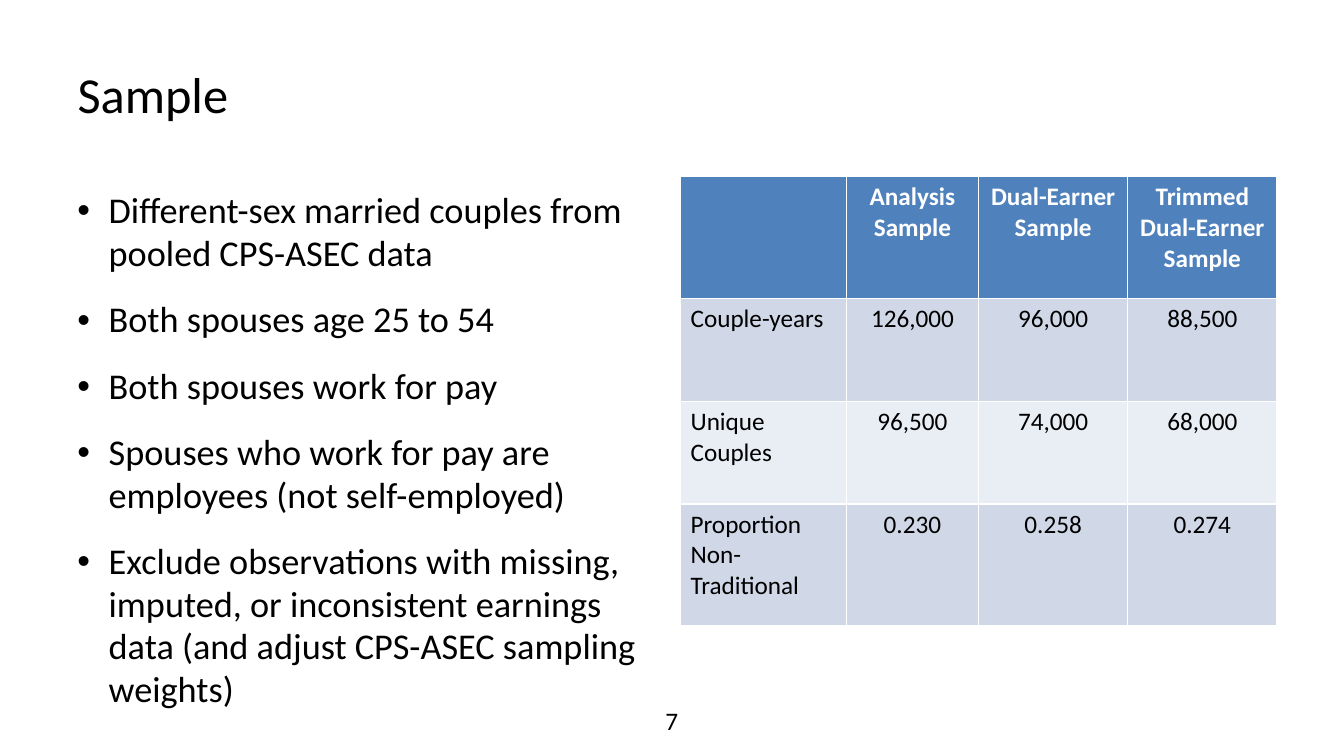
from dataclasses import dataclass

from lxml import etree
from pptx import Presentation
from pptx.dml.color import RGBColor
from pptx.enum import text as t
from pptx.oxml import ns
from pptx.util import Cm, Pt


@dataclass(frozen=True)
class Theme:
    font: str = "Calibri"
    black: str = "000000"
    white: str = "FFFFFF"
    header: str = "4F81BD"
    bands: tuple = ("D0D8E8", "E9EDF4")
    title_size: float = 36
    body_size: float = 25.9
    small_size: float = 18


theme = Theme()


def write(para, content, size=theme.small_size, color=theme.black, bold=False,
          align=t.PP_ALIGN.LEFT):
    para.alignment = align
    span = para.add_run()
    span.text = content
    span.font.name = theme.font
    span.font.size = Pt(size)
    span.font.bold = bold
    span.font.color.rgb = RGBColor.from_string(color)


def add_bullet(para):
    props = para._p.get_or_add_pPr()
    props.set("marL", str(Cm(0.79)))
    props.set("indent", str(-Cm(0.79)))
    etree.SubElement(props, ns.qn("a:buFont")).set("typeface", "Arial")
    etree.SubElement(props, ns.qn("a:buChar")).set("char", "•")


deck = Presentation()
deck.slide_width, deck.slide_height = Cm(33.87), Cm(19.05)
page = deck.slides.add_slide(deck.slide_layouts[5])

# Title
title = page.shapes.title
title.left, title.top, title.width, title.height = Cm(1.7), Cm(0.76), Cm(30.48), Cm(3.18)
title.text_frame.auto_size = t.MSO_AUTO_SIZE.NONE
title.text_frame.vertical_anchor = t.MSO_ANCHOR.MIDDLE
write(title.text_frame.paragraphs[0], "Sample", size=theme.title_size)

# Sample criteria
criteria = [
    "Different-sex married couples from pooled CPS-ASEC data",
    "Both spouses age 25 to 54",
    "Both spouses work for pay",
    "Spouses who work for pay are employees (not self-employed)",
    "Exclude observations with missing, imputed, or inconsistent earnings data "
    "(and adjust CPS-ASEC sampling weights)",
]
box = page.shapes.add_textbox(Cm(1.7), Cm(4.65), Cm(14.96), Cm(12.4))
box.text_frame.word_wrap = True
for index, criterion in enumerate(criteria):
    para = box.text_frame.paragraphs[0] if index == 0 else box.text_frame.add_paragraph()
    add_bullet(para)
    para.line_spacing = 0.98
    para.space_before = Pt(5 if index else 0)
    para.space_after = Pt(12)
    write(para, criterion, size=theme.body_size)

# Sample sizes
rows = [
    ("", "Analysis Sample", "Dual-Earner Sample", "Trimmed Dual-Earner Sample"),
    ("Couple-years", "126,000", "96,000", "88,500"),
    ("Unique Couples", "96,500", "74,000", "68,000"),
    ("Proportion Non-Traditional", "0.230", "0.258", "0.274"),
]
widths = [4.18, 3.33, 3.76, 3.76]
heights = [3.07, 2.59, 2.59, 3.07]
table = page.shapes.add_table(len(rows), len(widths), Cm(17.15), Cm(4.45),
                              Cm(sum(widths)), Cm(sum(heights))).table
for column, width in zip(table.columns, widths):
    column.width = Cm(width)
for r, (row, height) in enumerate(zip(rows, heights)):
    table.rows[r].height = Cm(height)
    fill = theme.bands[(r - 1) % 2] if r else theme.header
    for c, content in enumerate(row):
        cell = table.cell(r, c)
        cell.fill.solid()
        cell.fill.fore_color.rgb = RGBColor.from_string(fill)
        if content:
            write(cell.text_frame.paragraphs[0], content, bold=r == 0,
                  color=theme.black if r else theme.white,
                  align=t.PP_ALIGN.CENTER if c else t.PP_ALIGN.LEFT)

# Page number
number = page.shapes.add_textbox(Cm(12.98), Cm(17.65), Cm(7.9), Cm(1.02))
number.text_frame.word_wrap = True
write(number.text_frame.paragraphs[0], "7", align=t.PP_ALIGN.CENTER)

deck.save("out.pptx")
